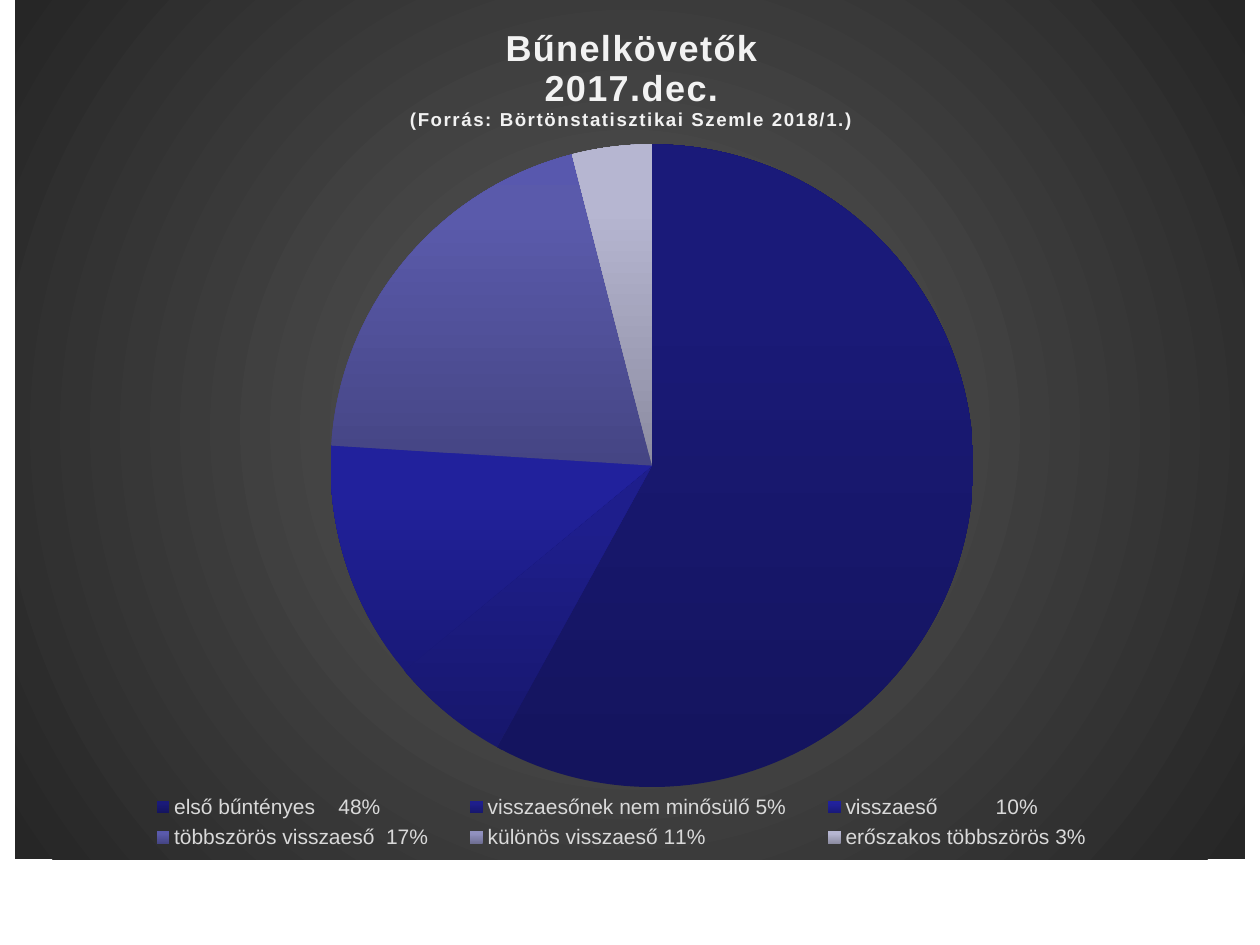
"""Build a slide with one pie chart of offenders by type of recidivism."""
from dataclasses import dataclass
from typing import Optional

import lxml.etree
import pptx
import pptx.chart.data
import pptx.dml.color
import pptx.enum.chart
import pptx.oxml
import pptx.oxml.ns
import pptx.util

FONT = "Arial"
qn = pptx.oxml.ns.qn


@dataclass
class Slice:
    label: str
    value: Optional[int]
    colors: tuple


@dataclass
class TitleLine:
    text: str
    size: float


SLICES = [
    Slice("első bűntényes    48%", 58, ("14145D", "1A1A79", "18187B")),
    Slice("visszaesőnek nem minősülő 5%", 6, ("17176C", "1E1E8C", "1C1C8E")),
    Slice("visszaeső          10%", 12, ("191978", "21219C", "1F1F9F")),
    Slice("többszörös visszaeső  17%", 20, ("454584", "5A5AAB", "5858AE")),
    Slice("különös visszaeső 11%", None, ("6F6F93", "9191BF", "9090C0")),
    Slice("erőszakos többszörös 3%", 4, ("8C8CA1", "B6B6D1", "B6B6D2")),
]
TITLE = [
    TitleLine("Bűnelkövetők", 20.6),
    TitleLine("2017.dec.", 20.6),
    TitleLine("(Forrás: Börtönstatisztikai Szemle 2018/1.)", 10.7),
]
LINEAR = '<a:lin ang="16200000" scaled="0"/>'
RADIAL = ('<a:path path="circle"><a:fillToRect l="50000" t="50000" '
          'r="50000" b="50000"/></a:path>')


def rgb(color: str) -> pptx.dml.color.RGBColor:
    return pptx.dml.color.RGBColor.from_string(color)


def set_font(font, color: str, **values) -> None:
    for name, value in values.items():
        setattr(font, name, value)
    font.color.rgb = rgb(color)


def gradient(stops, direction: str):
    gs = "".join(f'<a:gs pos="{pos * 1000}"><a:srgbClr val="{color}"/></a:gs>'
                 for pos, color in stops)
    return pptx.oxml.parse_xml(
        f'<a:gradFill {pptx.oxml.ns.nsdecls("a")} rotWithShape="1">'
        f'<a:gsLst>{gs}</a:gsLst>{direction}</a:gradFill>')


def set_layout(parent, index: int, **values) -> None:
    for old in parent.findall(qn("c:layout")):
        parent.remove(old)
    layout = parent.makeelement(qn("c:layout"))
    manual = lxml.etree.SubElement(layout, qn("c:manualLayout"))
    for name, value in values.items():
        lxml.etree.SubElement(manual, qn(f"c:{name}")).set("val", str(value))
    parent.insert(index, layout)


def add_title(chart) -> None:
    chart.has_title = True
    tf = chart.chart_title.text_frame
    for i, line in enumerate(TITLE):
        p = tf.paragraphs[0] if i == 0 else tf.add_paragraph()
        r = p.add_run()
        r.text = line.text
        set_font(r.font, "F2F2F2", name=FONT, bold=True,
                 size=pptx.util.Pt(line.size))
        r._r.get_or_add_rPr().set("spc", "100")
    set_layout(chart.chart_title._element, 1,
               xMode="edge", yMode="edge", x=0.318, y=0.028)


def add_legend(chart) -> None:
    chart.has_legend = True
    chart.legend.position = pptx.enum.chart.XL_LEGEND_POSITION.BOTTOM
    chart.legend.include_in_layout = False
    set_font(chart.legend.font, "D9D9D9", name=FONT, size=pptx.util.Pt(12))
    set_layout(chart.legend._element, 1, xMode="edge", yMode="edge",
               x=0.087, y=0.917, w=0.812, h=0.08)


def color_slices(series) -> None:
    for i, item in enumerate(SLICES):
        fmt = series.points[i].format
        fmt.fill.background()
        fmt.line.fill.background()
        blank = series._element.xpath("c:dPt/c:spPr/a:noFill")[-1]
        blank.getparent().replace(
            blank, gradient(zip((0, 80, 100), item.colors), LINEAR))


def fill_chart(chart) -> None:
    sp = chart._chartSpace.makeelement(qn("c:spPr"))
    sp.append(gradient([(0, "595959"), (100, "262626")], RADIAL))
    line = lxml.etree.SubElement(sp, qn("a:ln"))
    lxml.etree.SubElement(line, qn("a:noFill"))
    chart._chartSpace.find(qn("c:chart")).addnext(sp)


def add_pie(s) -> None:
    data = pptx.chart.data.CategoryChartData()
    data.categories = [item.label for item in SLICES]
    data.add_series("Series 1", [item.value for item in SLICES])
    box = [pptx.util.Inches(v) for v in (0.12, 0, 9.76, 6.82)]
    chart = s.shapes.add_chart(
        pptx.enum.chart.XL_CHART_TYPE.PIE, *box, data).chart
    set_font(chart.font, "000000", name=FONT, size=pptx.util.Pt(10))
    add_title(chart)
    add_legend(chart)
    chart.plots[0].vary_by_categories = True
    color_slices(chart.plots[0].series[0])
    set_layout(chart._chartSpace.find(f".//{qn('c:plotArea')}"), 0,
               layoutTarget="inner", xMode="edge", yMode="edge",
               x=0.036, y=0.168, w=0.964, h=0.748)
    fill_chart(chart)


def main() -> None:
    prs = pptx.Presentation()
    prs.slide_width = pptx.util.Inches(10)
    prs.slide_height = pptx.util.Inches(7.5)
    add_pie(prs.slides.add_slide(prs.slide_layouts[6]))
    prs.save("out.pptx")


if __name__ == "__main__":
    main()
